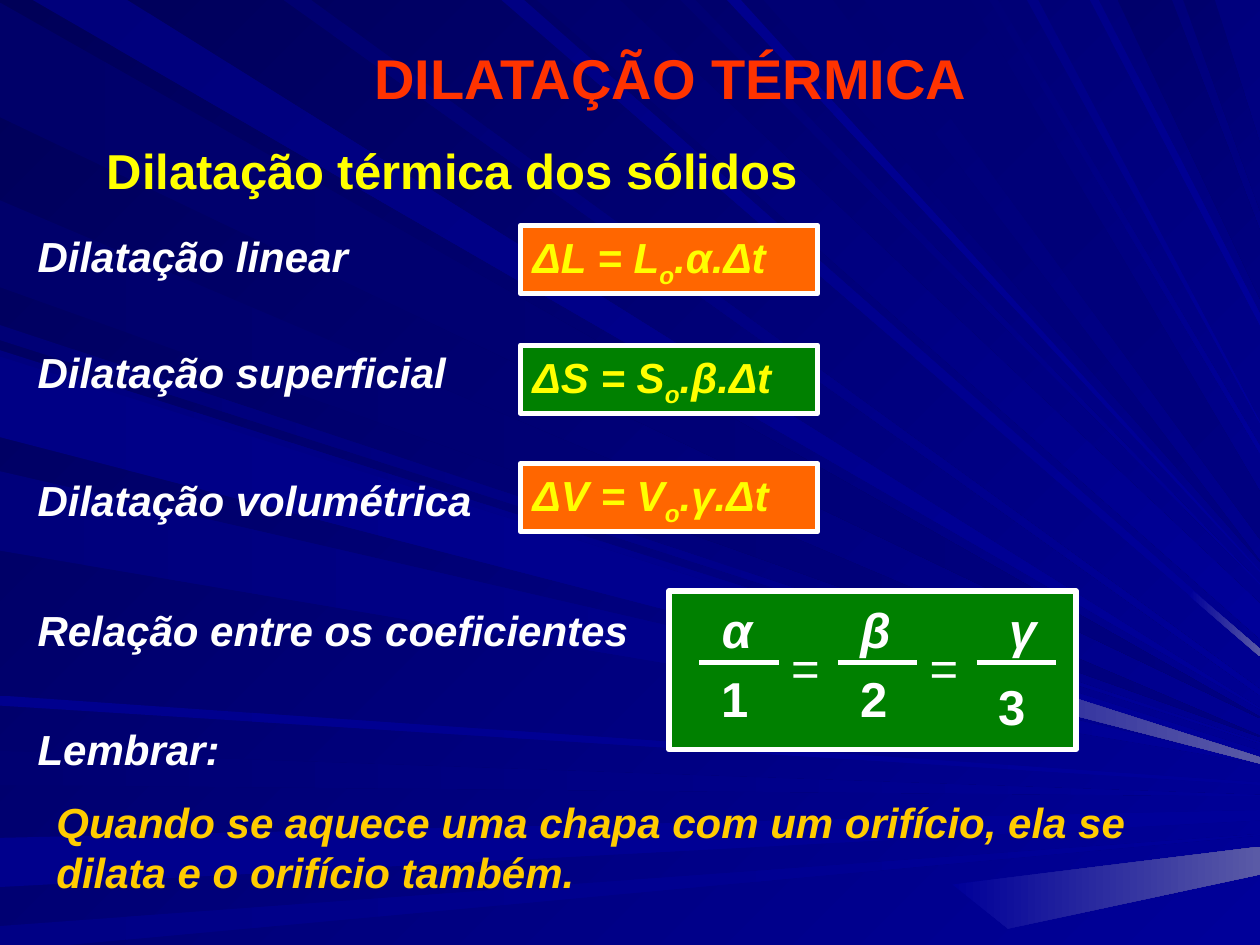
from dataclasses import dataclass
from typing import NamedTuple

from lxml.etree import SubElement
from pptx import Presentation
from pptx.dml.color import RGBColor
from pptx.dml.fill import FillFormat
from pptx.enum.shapes import MSO_CONNECTOR, MSO_SHAPE
from pptx.enum.text import MSO_ANCHOR, MSO_AUTO_SIZE, PP_ALIGN
from pptx.oxml.ns import qn
from pptx.slide import Slide
from pptx.text.text import TextFrame
from pptx.util import Emu, Pt

PX = 9144
SLIDE_WIDTH, SLIDE_HEIGHT = 1000, 750


@dataclass(frozen=True)
class Theme:
    font: str = "Arial"
    night: str = "000058"
    navy: str = "000080"
    blue: str = "000099"
    glow: str = "5A5AA6"
    white: str = "FFFFFF"
    yellow: str = "FFFF00"
    gold: str = "FFCC00"
    red: str = "FF3300"
    orange: str = "FF6600"
    green: str = "008000"
    title_size: int = 32
    heading_size: int = 28
    body_size: int = 24
    stroke: int = 3


THEME = Theme()


class Ray(NamedTuple):
    near: int
    far: int
    tip: int
    start: str
    end: str = THEME.blue
    spread: int = 1


class Label(NamedTuple):
    text: str
    top: int
    width: int


class Formula(NamedTuple):
    text: str
    top: int
    fill: str


class Fraction(NamedTuple):
    numerator: str
    denominator: str
    numerator_shift: int = 0
    denominator_drop: int = 0


LEFT_RAYS = [
    Ray(2, 93, 569, "000069", THEME.navy),
    Ray(596, 623, 631, "000071"),
    Ray(665, 704, 643, "00008C", spread=8),
    Ray(735, 755, 662, "000085"),
    Ray(258, 270, 589, "000076"),
    Ray(159, 228, 584, "00006B", THEME.navy),
    Ray(278, 342, 596, "00007E", spread=6),
    Ray(374, 437, 605, "00007B"),
    Ray(552, 560, 621, "00008E", spread=2),
    Ray(283, 347, 601, "000085", spread=5),
]

TOP_RAYS = [
    Ray(26, 101, 562, "00007B"),
    Ray(398, 416, 515, "000083", spread=6),
    Ray(426, 492, 479, "00006D", spread=28),
    Ray(540, 552, 463, "000073"),
    Ray(606, 661, 445, "000073", THEME.navy),
    Ray(887, 930, 183, "00006B", THEME.navy, 54),
    Ray(939, 964, 114, "00006D", THEME.navy, 53),
    Ray(225, 247, 547, "000070", spread=5),
    Ray(577, 588, 453, "00008E"),
    Ray(686, 770, 390, "000073", THEME.navy, 38),
    Ray(785, 792, 354, "000078", spread=6),
    Ray(815, 824, 335, "000085"),
    Ray(865, 872, 249, "00008A", spread=9),
]

GLOWS = [
    [(637, 485), (633, 511), (1000, 606), (1000, 601)],
    [(947, 469), (944, 473), (1000, 521), (1000, 515)],
    [(756, 702), (800, 737), (1000, 694), (1000, 672)],
]

LABELS = [
    Label("Dilatação linear", 178, 276),
    Label("Dilatação superficial", 270, 380),
    Label("Dilatação volumétrica", 372, 390),
    Label("Relação entre os coeficientes", 475, 504),
    Label("Lembrar:", 569, 173),
]

FORMULAS = [
    Formula("ΔL = L_o_.α.Δt", 179, THEME.orange),
    Formula("ΔS = S_o_.β.Δt", 274, THEME.green),
    Formula("ΔV = V_o_.γ.Δt", 368, THEME.orange),
]

BAR_LEFT, BAR_TOP, BAR_WIDTH, BAR_PITCH = 555, 526, 63, 110
FRACTIONS = [Fraction("α", "1"), Fraction("β", "2"), Fraction("γ", "3", 8, 6)]


def box(left: int, top: int, width: int, height: int) -> tuple[Emu, ...]:
    return tuple(Emu(length * PX) for length in (left, top, width, height))


def paint(fill: FillFormat, start: str, end: str, angle: int = 0) -> None:
    if start == end:
        fill.solid()
        fill.fore_color.rgb = RGBColor.from_string(start)
        return
    fill.gradient()
    fill.gradient_angle = (360 - angle) % 360
    for stop, color in zip(fill.gradient_stops, (start, end)):
        stop.color.rgb = RGBColor.from_string(color)


def write(frame: TextFrame, text: str, *, size: int = THEME.body_size, color: str = THEME.white,
          bold: bool = True, italic: bool = False, wrap: bool = True,
          anchor: MSO_ANCHOR = MSO_ANCHOR.TOP) -> None:
    frame.word_wrap = wrap
    frame.auto_size = MSO_AUTO_SIZE.NONE
    frame.vertical_anchor = anchor
    paragraph = frame.paragraphs[0]
    paragraph.alignment = PP_ALIGN.LEFT
    for position, piece in enumerate(text.split("_")):
        run = paragraph.add_run()
        run.text = piece
        run.font.name, run.font.size = THEME.font, Pt(size)
        run.font.bold, run.font.italic = bold, italic
        run.font.color.rgb = RGBColor.from_string(color)
        if position % 2:
            run.font._element.set("baseline", "-25000")


def add_text(slide: Slide, text: str, left: int, top: int, width: int, height: int, **style) -> None:
    write(slide.shapes.add_textbox(*box(left, top, width, height)).text_frame, text, **style)


def add_beam(slide: Slide, corners: list[tuple[int, int]], start: str, end: str, angle: int) -> None:
    outline = slide.shapes.build_freeform(*corners[0], scale=float(PX))
    outline.add_line_segments(corners[1:], close=True)
    beam = outline.convert_to_shape()
    beam.shadow.inherit = False
    beam.line.fill.background()
    paint(beam.fill, start, end, angle)


def add_ray(slide: Slide, ray: Ray, from_top: bool) -> None:
    tips = [(SLIDE_WIDTH, ray.tip), (SLIDE_WIDTH, ray.tip + ray.spread)]
    if from_top:
        corners = [(ray.near, 0), (ray.far, 0), *tips]
    else:
        corners = [(0, ray.far), (0, ray.near), *tips]
    add_beam(slide, corners, ray.start, ray.end, 45 if from_top else 0)


def add_panel(slide: Slide, left: int, top: int, width: int, height: int, fill: str) -> TextFrame:
    panel = slide.shapes.add_shape(MSO_SHAPE.RECTANGLE, *box(left, top, width, height))
    panel.shadow.inherit = False
    paint(panel.fill, fill, fill)
    panel.line.color.rgb = RGBColor.from_string(THEME.white)
    panel.line.width = Pt(THEME.stroke)
    return panel.text_frame


def add_fraction(slide: Slide, part: Fraction, left: int) -> None:
    add_text(slide, part.numerator, left + 8 + part.numerator_shift, BAR_TOP - 55, 55, 57,
             size=THEME.heading_size, italic=True)
    add_text(slide, part.denominator, left + 8, BAR_TOP + part.denominator_drop, 45, 57,
             size=THEME.heading_size)
    ends = box(left, BAR_TOP, left + BAR_WIDTH, BAR_TOP)
    bar = slide.shapes.add_connector(MSO_CONNECTOR.STRAIGHT, *ends)
    bar.line.color.rgb = RGBColor.from_string(THEME.white)
    bar.line.width = Pt(THEME.stroke)
    SubElement(bar._element.spPr, qn("a:effectLst"))


def main() -> None:
    deck = Presentation()
    deck.slide_width, deck.slide_height = Emu(SLIDE_WIDTH * PX), Emu(SLIDE_HEIGHT * PX)
    slide = deck.slides.add_slide(deck.slide_layouts[5])
    paint(slide.background.fill, THEME.night, THEME.blue, 45)
    for rays, from_top in ((LEFT_RAYS, False), (TOP_RAYS, True)):
        for ray in rays:
            add_ray(slide, ray, from_top)
    for corners in GLOWS:
        add_beam(slide, corners, THEME.blue, THEME.glow, 0)

    title = slide.shapes.title
    slide.shapes._spTree.append(title._element)
    title.left, title.top, title.width, title.height = box(287, 30, 497, 63)
    write(title.text_frame, "DILATAÇÃO TÉRMICA", size=THEME.title_size, color=THEME.red,
          wrap=False, anchor=MSO_ANCHOR.MIDDLE)
    add_text(slide, "Dilatação térmica dos sólidos", 75, 107, 787, 57,
             size=THEME.heading_size, color=THEME.yellow)
    for label in LABELS:
        add_text(slide, label.text, 20, label.top, label.width, 50, italic=True)
    for formula in FORMULAS:
        write(add_panel(slide, 413, formula.top, 236, 54, formula.fill), formula.text,
              color=THEME.yellow, italic=True)
    add_text(slide, "Quando se aquece uma chapa com um orifício, ela se dilata e o orifício também.",
             35, 627, 914, 90, color=THEME.gold, italic=True)

    add_panel(slide, 531, 469, 323, 126, THEME.green)
    for position, fraction in enumerate(FRACTIONS):
        left = BAR_LEFT + position * BAR_PITCH
        add_fraction(slide, fraction, left)
        if position:
            add_text(slide, "=", left - BAR_PITCH + BAR_WIDTH, 501, 63, 57,
                     size=THEME.heading_size, bold=False)
    deck.save("out.pptx")


if __name__ == "__main__":
    main()
